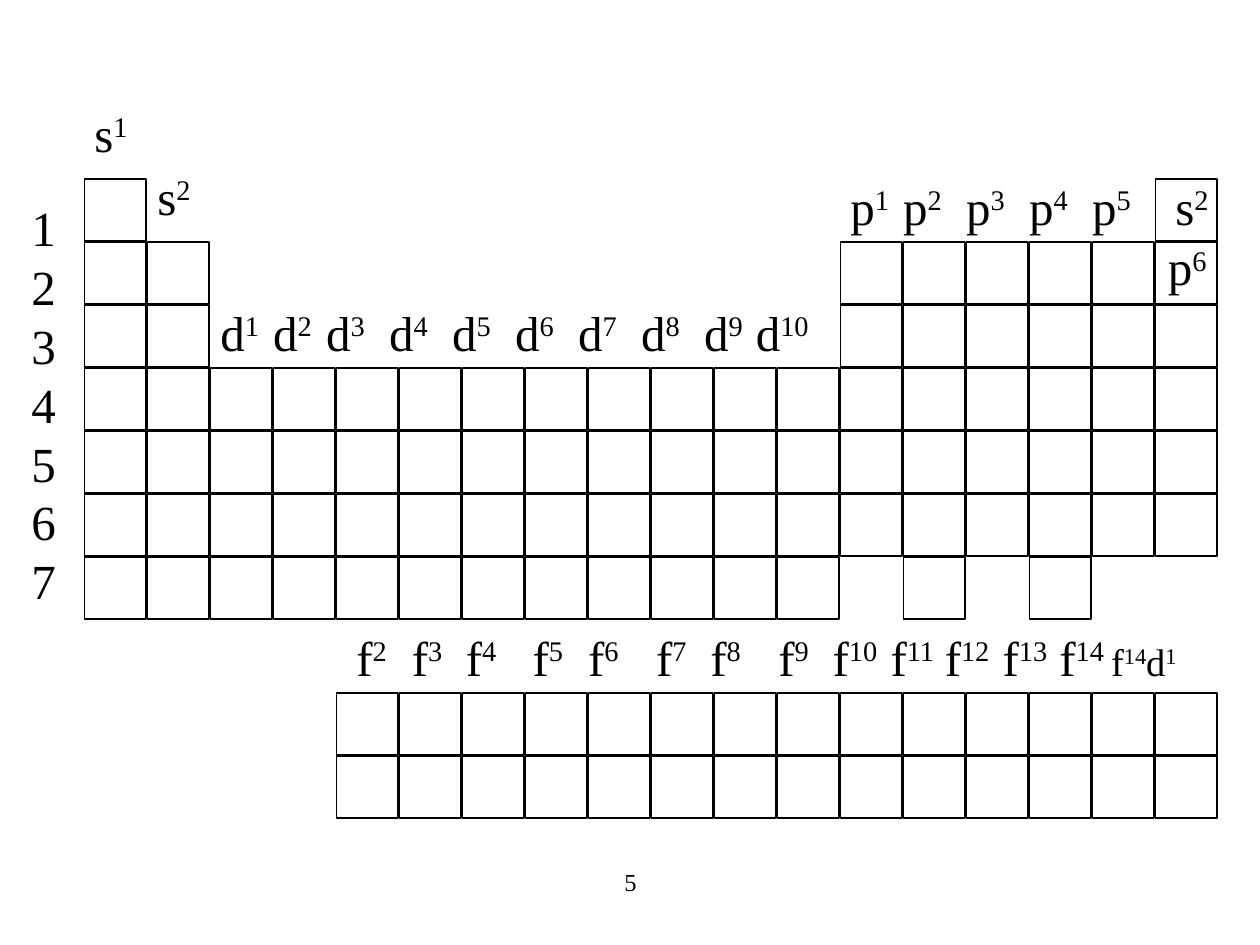
from dataclasses import dataclass
from itertools import groupby

from lxml.etree import SubElement
from pptx import Presentation
from pptx.dml.color import RGBColor
from pptx.enum.shapes import MSO_SHAPE as Shape
from pptx.enum.text import PP_ALIGN as Align
from pptx.oxml.ns import qn
from pptx.util import Inches, Pt

BLACK = RGBColor(0, 0, 0)
FONT = "Times New Roman"
PITCH, SIDE = 0.5, 0.49
LEFT, TOP, F_TOP = 0.67, 1.42, 5.5

# Columns filled in each period
ENDS = [0, 17]
OUTER = [0, 1, *range(12, 18)]
FULL = [*range(18)]
LAST = [*range(12), 13, 15]
PERIODS = [ENDS, OUTER, OUTER, FULL, FULL, FULL, LAST]
F_ROWS = [[*range(4, 18)]] * 2


@dataclass
class Row:
    """Orbital labels in one box; each stop places the next label."""
    left: float
    top: float
    width: float
    labels: list[str]
    stops: tuple[float, ...] = ()


ROWS = [
    Row(0.65, 0.77, 0.48, ["s1"]),
    Row(1.15, 1.27, 0.48, ["s2"]),
    Row(1.65, 2.35, 5.12, [f"d{n}" for n in range(1, 11)],
        (0.42, *(0.84 + PITCH * n for n in range(7)), 4.25)),
    Row(9.23, 1.35, 0.48, ["s2"]),
    Row(6.65, 1.35, 2.55, [f"p{n}" for n in range(1, 6)],
        tuple(0.42 + PITCH * n for n in range(4))),
    Row(9.17, 1.83, 0.52, ["p6"]),
    Row(2.73, 4.93, 7.14, [f"f{n}" for n in range(2, 15)] + ["f14d1"],
        (0.44, 0.87, 1.4, 1.84, 2.38, 2.81, 3.35, 3.78, 4.24, 4.67,
         5.13, 5.58, 5.99)),
]


def add_cells(slide, rows: list[list[int]], top: float) -> None:
    group = slide.shapes.add_group_shape()
    for i, cols in enumerate(rows):
        for col in cols:
            cell = group.shapes.add_shape(
                Shape.RECTANGLE, Inches(LEFT + PITCH * col),
                Inches(top + PITCH * i), Inches(SIDE), Inches(SIDE))
            cell.shadow.inherit = False
            cell.fill.background()
            cell.line.color.rgb = BLACK
            cell.line.width = Pt(1)


def add_box(slide, left: float, top: float, width: float, height: float,
            wrap: bool = False):
    box = slide.shapes.add_textbox(
        Inches(left), Inches(top), Inches(width), Inches(height))
    box.text_frame.word_wrap = wrap
    return box.text_frame


def set_font(para, size: float = 28) -> None:
    para.font.name = FONT
    para.font.size = Pt(size)
    para.font.color.rgb = BLACK


def add_label(para, label: str, lead: str) -> None:
    """Add letters with their digits raised; a double label is smaller."""
    for raised, chars in groupby(label, str.isdigit):
        run = para.add_run()
        run.text = lead + "".join(chars)
        lead = ""
        if len(label) > 3:
            run.font.size = Pt(22)
        if raised:
            run._r.get_or_add_rPr().set("baseline", "30000")


def add_row(slide, row: Row) -> None:
    frame = add_box(slide, row.left, row.top, row.width, 0.56,
                    bool(row.stops))
    para = frame.paragraphs[0]
    if row.stops:
        tabs = SubElement(para._p.get_or_add_pPr(), qn("a:tabLst"))
        for stop in row.stops:
            SubElement(tabs, qn("a:tab"), pos=str(Inches(stop)), algn="l")
    set_font(para)
    for i, label in enumerate(row.labels):
        add_label(para, label, "\t" if i else "")


def add_periods(slide) -> None:
    frame = add_box(slide, 0.15, 1.52, 0.39, 3.37)
    frame.text = "\n".join(str(n + 1) for n in range(len(PERIODS)))
    for para in frame.paragraphs:
        set_font(para)


def add_number(slide) -> None:
    frame = add_box(slide, 3.42, 6.83, 3.17, 0.5, True)
    frame.text = "5"
    para = frame.paragraphs[0]
    para.alignment = Align.CENTER
    set_font(para, 14)


def main() -> None:
    deck = Presentation()
    deck.slide_width, deck.slide_height = Inches(10), Inches(7.5)
    slide = deck.slides.add_slide(deck.slide_layouts[6])
    add_number(slide)
    add_cells(slide, F_ROWS, F_TOP)
    for row in ROWS:
        add_row(slide, row)
    add_periods(slide)
    add_cells(slide, PERIODS, TOP)
    deck.save("out.pptx")


if __name__ == "__main__":
    main()
